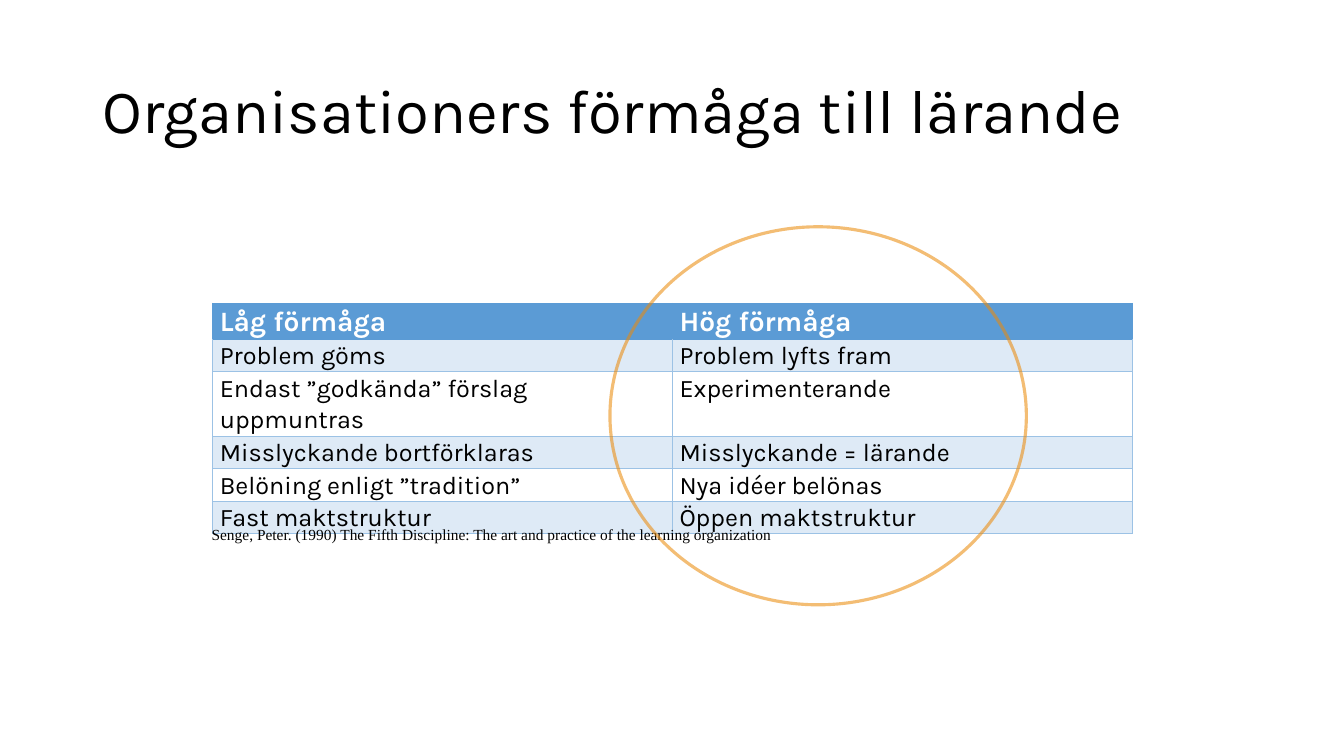
import pptx
import pptx.util
import pptx.dml.color
import pptx.enum.shapes
import pptx.enum.text
import pptx.oxml
import pptx.oxml.ns
import lxml.etree

Inches, Pt = pptx.util.Inches, pptx.util.Pt
RGBColor = pptx.dml.color.RGBColor
MSO_ANCHOR = pptx.enum.text.MSO_ANCHOR
qn = pptx.oxml.ns.qn

BLACK = RGBColor(0x00, 0x00, 0x00)
WHITE = RGBColor(0xFF, 0xFF, 0xFF)
HEADER_BLUE = RGBColor(0x5B, 0x9B, 0xD5)
BAND_BLUE = RGBColor(0xDE, 0xEA, 0xF6)
BORDER_BLUE = RGBColor(0x9C, 0xC2, 0xE5)
ORANGE = RGBColor(0xEB, 0x8B, 0x0B)


def write(tf, text, size, font="Karla", color=BLACK, bold=False, spacing=1.07, after=0):
    tf.word_wrap = True
    p = tf.paragraphs[0]
    p.line_spacing = spacing
    p.space_after = Pt(after)
    r = p.add_run()
    r.text = text
    r.font.name = font
    r.font.size = Pt(size)
    r.font.bold = bold
    r.font.color.rgb = color


def set_borders(cell, colors):
    tcPr = cell._tc.get_or_add_tcPr()
    for i, (side, color) in enumerate(zip("LRTB", colors)):
        ln = pptx.oxml.parse_xml(
            '<a:ln%s xmlns:a="http://schemas.openxmlformats.org/drawingml/2006/main" w="12700">'
            '<a:solidFill><a:srgbClr val="%s"/></a:solidFill></a:ln%s>' % (side, color, side))
        tcPr.insert(i, ln)


prs = pptx.Presentation()
prs.slide_width, prs.slide_height = Inches(13.33), Inches(7.5)
s = prs.slides.add_slide(prs.slide_layouts[6])

# Title
title = s.shapes.add_textbox(Inches(0.92), Inches(0.4), Inches(11.5), Inches(1.45))
title.text_frame.vertical_anchor = MSO_ANCHOR.MIDDLE
write(title.text_frame, "Organisationers förmåga till lärande", 44, spacing=0.9)

# Comparison table
rows = [
    ("Låg förmåga", "Hög förmåga"),
    ("Problem göms", "Problem lyfts fram"),
    ("Endast ”godkända” förslag uppmuntras", "Experimenterande"),
    ("Misslyckande bortförklaras", "Misslyckande = lärande"),
    ("Belöning enligt ”tradition”", "Nya idéer belönas"),
    ("Fast maktstruktur", "Öppen maktstruktur"),
]
heights = [0.35, 0.31, 0.63, 0.31, 0.31, 0.31]
table = s.shapes.add_table(len(rows), 2, Inches(2.11), Inches(3.01),
                           Inches(9.12), Inches(sum(heights))).table
table.horz_banding = False
for i, (row, height) in enumerate(zip(rows, heights)):
    table.rows[i].height = Inches(height)
    header = i == 0
    for j, text in enumerate(row):
        cell = table.cell(i, j)
        cell.margin_left = cell.margin_right = Inches(0.07)
        cell.margin_top = cell.margin_bottom = 0
        write(cell.text_frame, text, 20 if header else 18,
              color=WHITE if header else BLACK, bold=header)
        if header or i % 2:
            cell.fill.solid()
            cell.fill.fore_color.rgb = HEADER_BLUE if header else BAND_BLUE
        else:
            cell.fill.background()
        side = HEADER_BLUE if header else BORDER_BLUE
        top = HEADER_BLUE if i < 2 else BORDER_BLUE
        set_borders(cell, (side, side, top, side))

# Citation
citation = s.shapes.add_textbox(Inches(2), Inches(5.15), Inches(10.35), Inches(0.29))
write(citation.text_frame,
      "Senge, Peter. (1990) The Fifth Discipline: The art and practice of the learning organization",
      11, font="Times New Roman", after=8)

# Ring around the high-ability column
ring = s.shapes.add_shape(pptx.enum.shapes.MSO_SHAPE.OVAL,
                          Inches(6.05), Inches(2.25), Inches(4.13), Inches(3.75))
ring.shadow.inherit = False
ring.fill.background()
ring.line.color.rgb = ORANGE
ring.line.width = Pt(2.25)
color = ring.line._get_or_add_ln().find(".//" + qn("a:srgbClr"))
lxml.etree.SubElement(color, qn("a:alpha"), val="56000")

prs.save("out.pptx")
